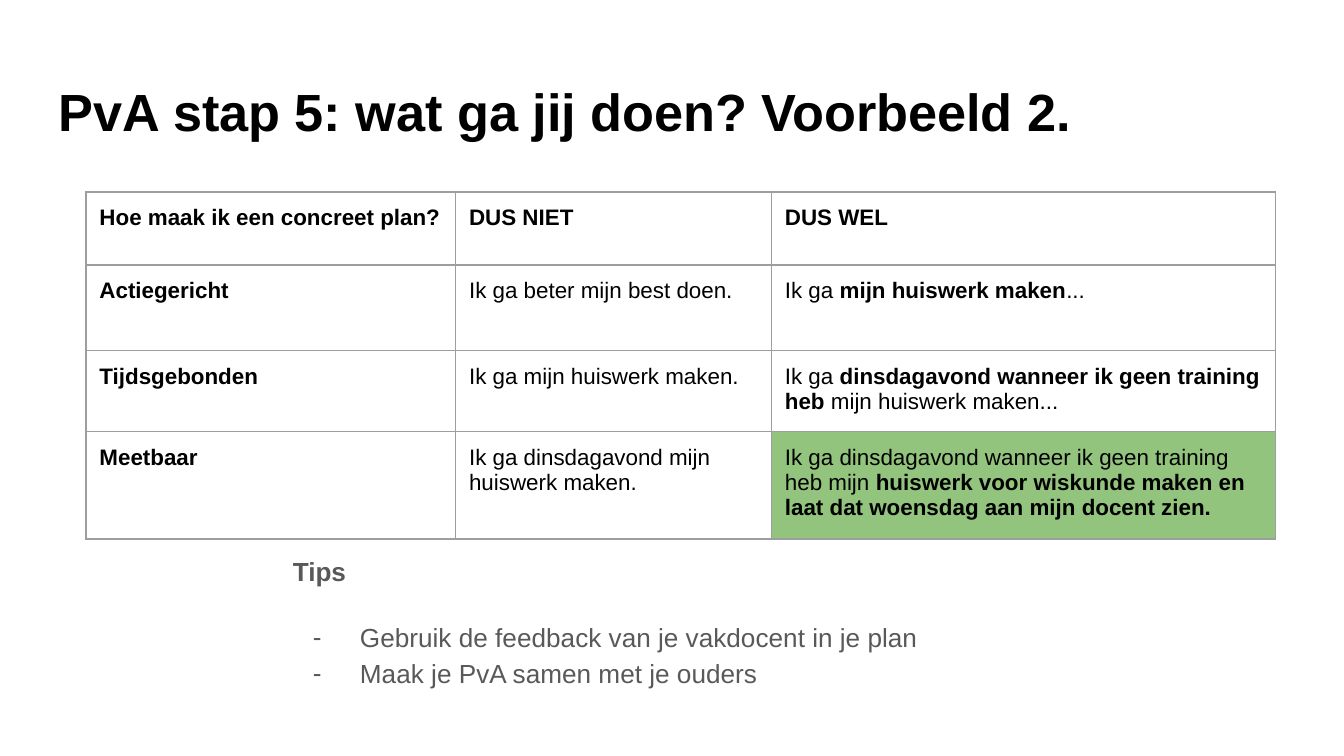
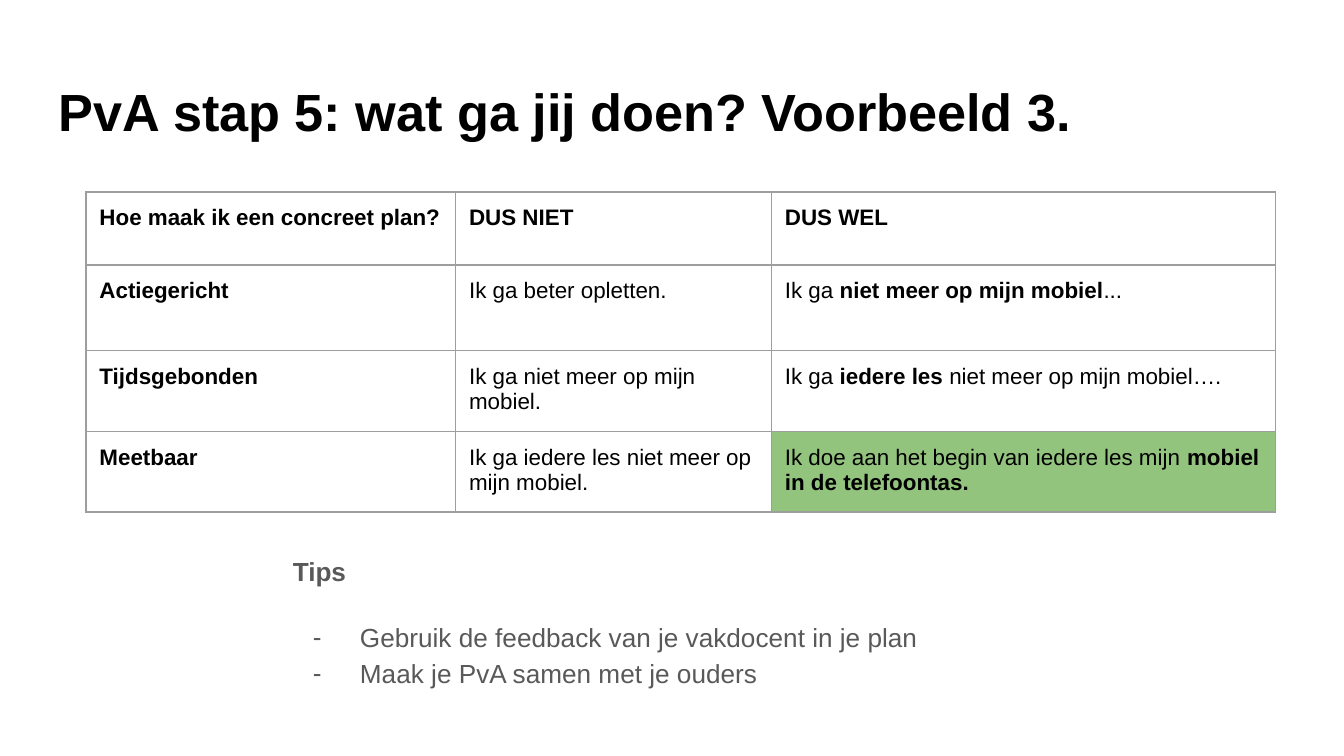
"""Builds two slides with worked examples of a concrete action plan."""
from lxml.etree import SubElement
from pptx import Presentation
from pptx.dml.color import RGBColor as RGB
from pptx.oxml.ns import qn
from pptx.util import Inches, Pt

FONT, BLACK, GREY = "Arial", "000000", "595959"
BORDER, GREEN = "9E9E9E", "93C47D"
MARGIN = Inches(0.1)

TITLE = "PvA stap 5: wat ga jij doen? Voorbeeld {}."
HEADER = ["Hoe maak ik een concreet plan?", "DUS NIET", "DUS WEL"]
CRITERIA = ["Actiegericht", "Tijdsgebonden", "Meetbaar"]
COL_WIDTHS = [2.75, 2.35, 3.75]
ROW_HEIGHTS = [0.54, 0.64, 0.54, 0.47]
TIPS = ["Gebruik de feedback van je vakdocent in je plan", "Maak je PvA samen met je ouders"]

EXAMPLES = {
    2: [
        ("Ik ga beter mijn best doen.", ("Ik ga ", "mijn huiswerk maken", "...")),
        ("Ik ga mijn huiswerk maken.",
         ("Ik ga ", "dinsdagavond wanneer ik geen training heb ", "mijn huiswerk maken...")),
        ("Ik ga dinsdagavond mijn huiswerk maken.",
         ("Ik ga dinsdagavond wanneer ik geen training heb mijn ",
          "huiswerk voor wiskunde maken en laat dat woensdag aan mijn docent zien.")),
    ],
    3: [
        ("Ik ga beter opletten.", ("Ik ga ", "niet meer op mijn mobiel", "...")),
        ("Ik ga niet meer op mijn mobiel.",
         ("Ik ga", " iedere les", " niet meer op mijn mobiel….")),
        ("Ik ga iedere les niet meer op mijn mobiel.",
         ("Ik doe aan het begin van iedere les mijn ", "mobiel in de telefoontas.")),
    ],
}


def rgb(value):
    return RGB.from_string(value)


def set_font(p, size, color, bold=None):
    p.font.name, p.font.size, p.font.bold = FONT, Pt(size), bold
    p.font.color.rgb = rgb(color)
    SubElement(p._p, qn("a:endParaRPr"), sz=str(size * 100))


def set_margins(box):
    box.margin_left = box.margin_right = box.margin_top = box.margin_bottom = MARGIN


def add_box(slide, left, top, width, height):
    tf = slide.shapes.add_textbox(*map(Inches, (left, top, width, height))).text_frame
    tf.word_wrap = True
    set_margins(tf)
    return tf


def add_borders(cell):
    tc_pr = cell._tc.get_or_add_tcPr()
    for side in ("lnL", "lnR", "lnT", "lnB"):
        ln = SubElement(tc_pr, qn(f"a:{side}"), w=str(Pt(1)))
        fill = SubElement(ln, qn("a:solidFill"))
        SubElement(fill, qn("a:srgbClr"), val=BORDER)


def add_bullet(p):
    p_pr = p._p.get_or_add_pPr()
    p_pr.set("marL", str(Inches(0.5)))
    p_pr.set("indent", str(Inches(-0.35)))
    color = SubElement(p_pr, qn("a:buClr"))
    SubElement(color, qn("a:srgbClr"), val=GREY)
    SubElement(p_pr, qn("a:buSzPts"), val="1400")
    SubElement(p_pr, qn("a:buFont"), typeface=FONT)
    SubElement(p_pr, qn("a:buChar"), char="-")


def fill_cell(cell, content, bold, fill):
    set_margins(cell)
    add_borders(cell)
    if fill:
        cell.fill.solid()
        cell.fill.fore_color.rgb = rgb(fill)
    else:
        cell.fill.background()
    p = cell.text_frame.paragraphs[0]
    if isinstance(content, str):
        p.text = content
        set_font(p, 12, BLACK, bold)
        return
    for i, text in enumerate(content):
        r = p.add_run()
        r.text = text
        r.font.bold = i % 2 == 1
    set_font(p, 12, BLACK)


def add_plan_table(slide, example):
    rows = [HEADER] + [[name, *pair] for name, pair in zip(CRITERIA, example)]
    table = slide.shapes.add_table(
        len(rows), len(HEADER), Inches(0.64), Inches(1.43),
        Inches(sum(COL_WIDTHS)), Inches(sum(ROW_HEIGHTS))).table
    table.first_row = table.horz_banding = False
    for column, width in zip(table.columns, COL_WIDTHS):
        column.width = Inches(width)
    for row, height in zip(table.rows, ROW_HEIGHTS):
        row.height = Inches(height)
    last = (len(rows) - 1, len(HEADER) - 1)
    for i, row in enumerate(rows):
        for j, content in enumerate(row):
            fill = GREEN if (i, j) == last else None
            fill_cell(table.cell(i, j), content, i == 0 or j == 0, fill)


def add_tips(slide):
    tf = add_box(slide, 2.08, 4, 9.32, 1.19)
    for i, text in enumerate(["Tips", *TIPS]):
        p = tf.add_paragraph() if i else tf.paragraphs[0]
        p.text = text
        p.line_spacing = 1.15
        if i:
            add_bullet(p)
        if i == 1:
            p.space_before = Pt(16)
        set_font(p, 14, GREY, i == 0)


def main():
    prs = Presentation()
    prs.slide_width = Inches(10)
    prs.slide_height = prs.slide_width * 9 // 16
    for number, example in EXAMPLES.items():
        slide = prs.slides.add_slide(prs.slide_layouts[6])
        p = add_box(slide, 0.34, 0.49, 9.32, 0.63).paragraphs[0]
        p.text = TITLE.format(number)
        set_font(p, 28, BLACK, True)
        add_plan_table(slide, example)
        add_tips(slide)
    prs.save("out.pptx")


if __name__ == "__main__":
    main()
